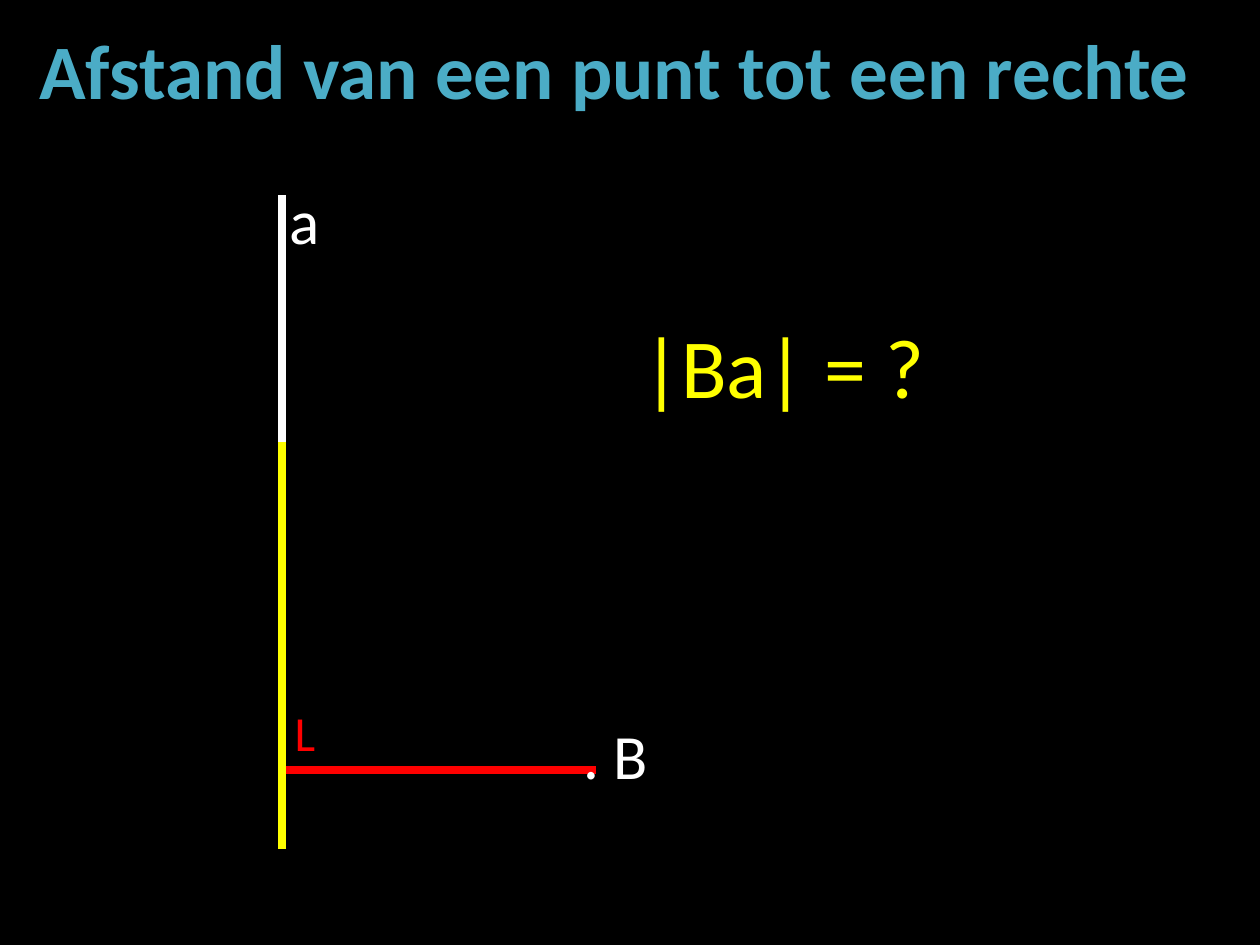
from dataclasses import dataclass

from lxml import etree
from pptx import Presentation
from pptx.dml.color import RGBColor
from pptx.enum.shapes import MSO_CONNECTOR
from pptx.enum.text import MSO_ANCHOR, MSO_AUTO_SIZE, PP_ALIGN
from pptx.oxml.ns import qn
from pptx.util import Inches, Pt

STRAIGHT = MSO_CONNECTOR.STRAIGHT
TOP = MSO_ANCHOR.TOP
GROW = MSO_AUTO_SIZE.SHAPE_TO_FIT_TEXT
LEFT, CENTER = PP_ALIGN.LEFT, PP_ALIGN.CENTER


@dataclass(frozen=True)
class Theme:
    font: str = "Calibri"
    background: RGBColor = RGBColor(0x00, 0x00, 0x00)
    title: RGBColor = RGBColor(0x4B, 0xAC, 0xC6)
    given: RGBColor = RGBColor(0xFF, 0xFF, 0xFF)
    highlight: RGBColor = RGBColor(0xFF, 0xFF, 0x00)
    distance: RGBColor = RGBColor(0xFF, 0x00, 0x00)
    title_size: Pt = Pt(44)
    question_size: Pt = Pt(48)
    label_size: Pt = Pt(36)
    angle_size: Pt = Pt(28)
    stroke: Pt = Pt(4.5)


THEME = Theme()


def place(shape, left, top, width, height):
    shape.left, shape.top = Inches(left), Inches(top)
    shape.width, shape.height = Inches(width), Inches(height)


def write(shape, text, size, color, align=LEFT, bold=False):
    frame = shape.text_frame
    frame.text = text
    frame.word_wrap = True
    frame.auto_size = GROW
    frame.vertical_anchor = TOP
    paragraph = frame.paragraphs[0]
    paragraph.alignment = align
    font = paragraph.font
    font.name, font.size, font.bold = THEME.font, size, bold
    font.color.rgb = color


def add_label(slide, box, text, size, color):
    label = slide.shapes.add_textbox(*(Inches(length) for length in box))
    write(label, text, size, color)


def add_segment(slide, start, end, color):
    segment = slide.shapes.add_connector(
        STRAIGHT, *(Inches(length) for length in (*start, *end)))
    segment.line.color.rgb = color
    segment.line.width = THEME.stroke
    etree.SubElement(segment._element.spPr, qn("a:effectLst"))


def add_title(slide, box):
    title = slide.shapes.title
    place(title, *box)
    write(title, "Afstand van een punt tot een rechte",
          THEME.title_size, THEME.title, CENTER, bold=True)


def add_construction(slide, left, top, width, height):
    """Draw line a on the left edge and the perpendicular from point B to it."""
    foot_y = top + 4.56
    add_segment(slide, (left + width, foot_y), (left, foot_y), THEME.distance)
    add_segment(slide, (left, top), (left, top + 3.22), THEME.given)
    add_label(slide, (left + width - 0.2, foot_y - 0.47, 1.97, 0.71),
              ". B", THEME.label_size, THEME.given)
    add_label(slide, (left - 0.15, top - 0.16, 1.97, 0.71),
              " a", THEME.label_size, THEME.given)
    add_segment(slide, (left, top + 1.96), (left, top + height), THEME.highlight)
    add_label(slide, (left, foot_y - 0.58, 0.51, 0.57),
              "L", THEME.angle_size, THEME.distance)


def add_question(slide, box):
    add_label(slide, box, "|Ba| = ?", THEME.question_size, THEME.highlight)


def main():
    presentation = Presentation()
    presentation.slide_width, presentation.slide_height = Inches(10), Inches(7.5)
    title_only = presentation.slide_layouts[5]
    slide = presentation.slides.add_slide(title_only)
    slide.background.fill.solid()
    slide.background.fill.fore_color.rgb = THEME.background

    add_title(slide, (-0.24, 0.13, 10.24, 0.84))
    add_construction(slide, left=2.24, top=1.55, width=2.49, height=5.19)
    add_question(slide, (5, 2.45, 2.99, 0.91))
    presentation.save("out.pptx")


if __name__ == "__main__":
    main()
